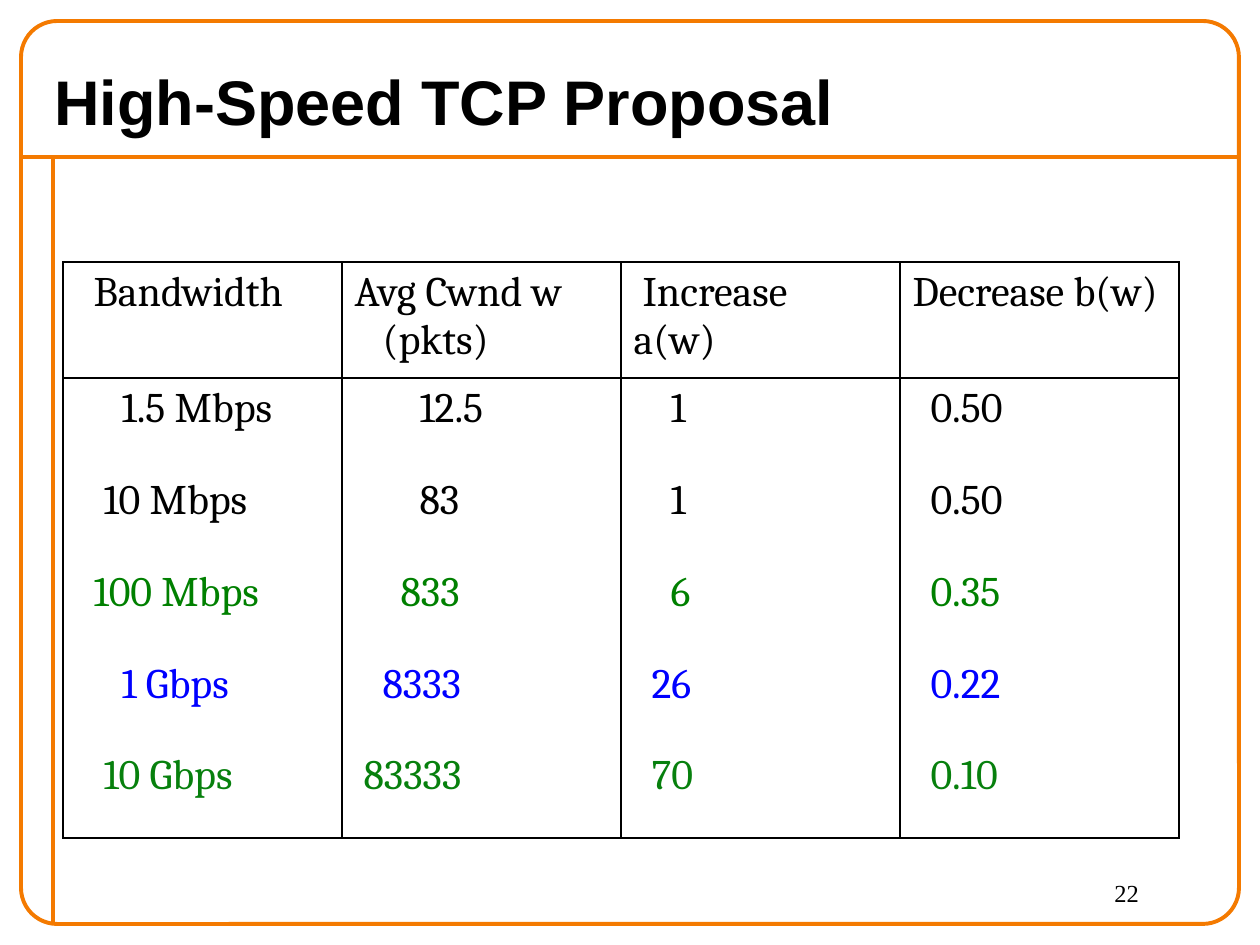
"""Build the High-Speed TCP Proposal slide."""
import pptx
import pptx.dml.color
import pptx.enum.shapes
import pptx.enum.text
import pptx.oxml
import pptx.oxml.ns
import pptx.util

COLORS = {"frame": "F47A00", "black": "000000", "green": "008000",
          "blue": "0000FF", "leaf": "07800D"}


def px(n):
    return pptx.util.Emu(round(n * 914400 / 126))


def style(p, name, size, color, bold=False):
    p.font.name = name
    p.font.size = pptx.util.Pt(size)
    p.font.bold = bold
    p.font.color.rgb = pptx.dml.color.RGBColor.from_string(COLORS[color])


prs = pptx.Presentation()
prs.slide_width, prs.slide_height = px(1260), px(945)
s = prs.slides.add_slide(prs.slide_layouts[6])
frame_color = pptx.dml.color.RGBColor.from_string(COLORS["frame"])

for x1, y1, x2, y2 in [(21, 157, 1239, 157), (53, 157, 53, 924)]:
    line = s.shapes.add_connector(
        pptx.enum.shapes.MSO_CONNECTOR.STRAIGHT, px(x1), px(y1), px(x2), px(y2))
    line.line.color.rgb = frame_color
    line.line.width = pptx.util.Pt(2.25)
    pptx.oxml.ns.qn("a:effectLst")
    line._element.spPr.append(pptx.oxml.parse_xml(
        f'<a:effectLst {pptx.oxml.ns.nsdecls("a")}/>'))

frame = s.shapes.add_shape(
    pptx.enum.shapes.MSO_SHAPE.ROUNDED_RECTANGLE, px(21), px(21), px(1218), px(903))
frame.adjustments[0] = 0.04
frame.shadow.inherit = False
frame.fill.background()
frame.line.color.rgb = frame_color
frame.line.width = pptx.util.Pt(2.25)

for text, box, name, size, bold, anchor in [
        ("High-Speed TCP Proposal", (42, 53, 1218, 94), "Arial", 36, True, "MIDDLE"),
        ("22", (1102, 872, 126, 53), "Times New Roman", 14, False, "TOP")]:
    sp = s.shapes.add_textbox(*map(px, box))
    tf = sp.text_frame
    tf.word_wrap = True
    tf.vertical_anchor = pptx.enum.text.MSO_ANCHOR[anchor]
    p = tf.paragraphs[0]
    p.text = text
    style(p, name, size, "black", bold)

rows = [
    ("black", "Bandwidth", "Avg Cwnd w\v(pkts)", "Increase\va(w)", "Decrease b(w)"),
    ("black", "1.5 Mbps", "12.5", "1", "0.50"),
    ("black", "10 Mbps", "83", "1", "0.50"),
    ("green", "100 Mbps", "833", "6", "0.35"),
    ("blue", "1 Gbps", "8333", "26", "0.22"),
    ("leaf", "10 Gbps", "83333", "70", "0.10"),
]
first_indents = [(18, 0, 9, 0), (46, 65, 37, 18), (28, 65, 37, 18),
                 (18, 46, 37, 18), (46, 28, 18, 18), (28, 9, 18, 18)]
wrapped_indents = {(0, 1): 28}

table = s.shapes.add_table(6, 4, px(63), px(262), px(1116), px(576)).table
table.first_row = table.horz_banding = False
for column in table.columns:
    column.width = px(279)
for i, (color, *texts) in enumerate(rows):
    table.rows[i].height = px(92 if i else 116)
    for j, text in enumerate(texts):
        cell = table.cell(i, j)
        cell.fill.background()
        p = cell.text_frame.paragraphs[0]
        p.text = text
        style(p, "Cambria", 24, color)
        margin = wrapped_indents.get((i, j), 0)
        pPr = p._p.get_or_add_pPr()
        pPr.set("marL", str(px(margin)))
        pPr.set("indent", str(px(first_indents[i][j] - margin)))
        sides = {"L": True, "R": True, "T": i < 2, "B": i in (0, 5)}
        for k, (side, shown) in enumerate(sides.items()):
            paint = (f'<a:solidFill><a:srgbClr val="{COLORS["black"]}"/></a:solidFill>'
                     if shown else "<a:noFill/>")
            cell._tc.get_or_add_tcPr().insert(k, pptx.oxml.parse_xml(
                f'<a:ln{side} {pptx.oxml.ns.nsdecls("a")} w="12700">{paint}</a:ln{side}>'))

prs.save("out.pptx")
